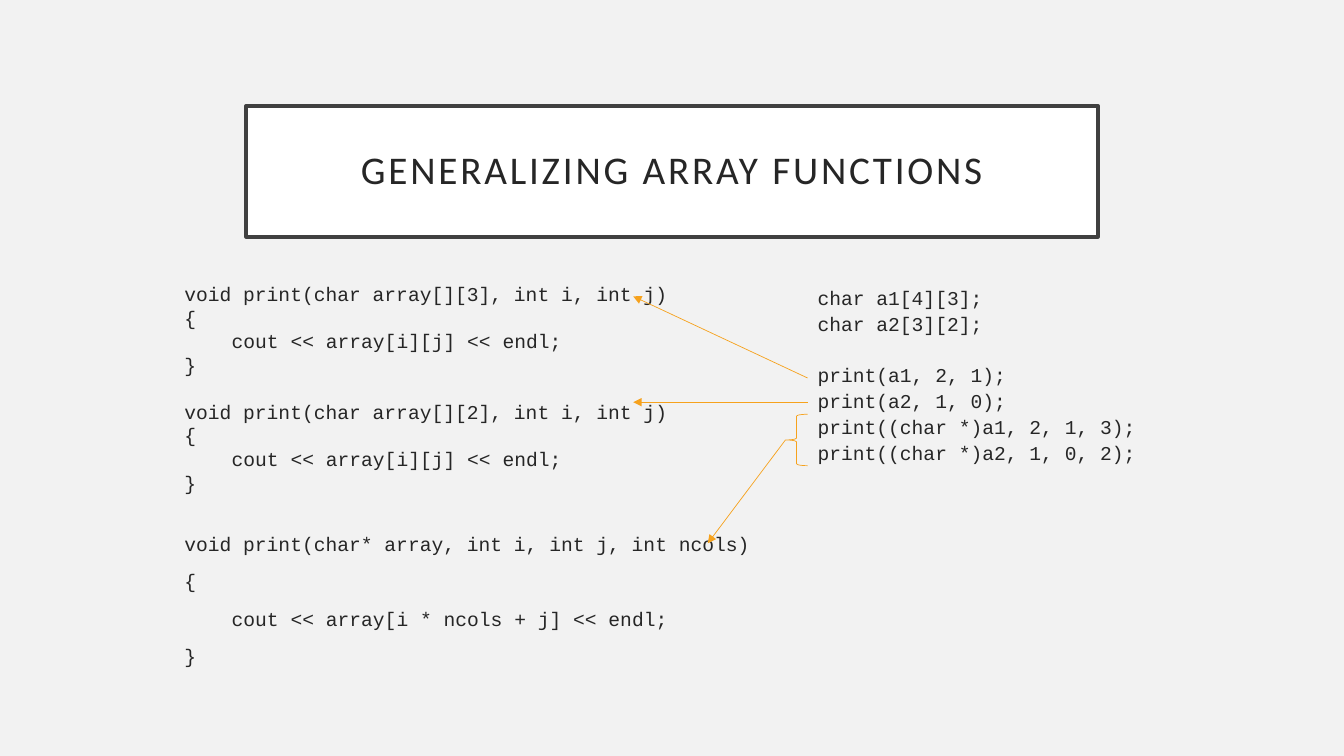
import pptx
import pptx.dml.color
import pptx.enum.shapes
import pptx.enum.text
import pptx.oxml
import pptx.oxml.ns
import pptx.util
from pptx.util import Inches

INK, GOLD = "262626", "F6A21D"
KINDS = pptx.enum.shapes.MSO_SHAPE

# Each block of code lists its lines; a tab marks one indent.
FUNCS = [
    ["void print(char array[][3], int i, int j)", "{",
     "\tcout << array[i][j] << endl;", "}"],
    ["void print(char array[][2], int i, int j)", "{",
     "\tcout << array[i][j] << endl;", "}"],
]
GENERAL = [["void print(char* array, int i, int j, int ncols)", "{",
            "\tcout << array[i * ncols + j] << endl;", "}"]]
CALLS = [
    ["char a1[4][3];", "char a2[3][2];"],
    ["print(a1, 2, 1);", "print(a2, 1, 0);",
     "print((char *)a1, 2, 1, 3);", "print((char *)a2, 1, 0, 2);"],
]


def color(code):
    return pptx.dml.color.RGBColor.from_string(code)


def paint(line, code, width):
    line.color.rgb = color(code)
    line.width = pptx.util.Pt(width)


def write(para, text, font, size):
    run = para.add_run()
    run.text = text
    run.font.name = font
    run.font.size = pptx.util.Pt(size)
    run.font.color.rgb = color(INK)
    return run


def title(slide, box, text):
    shape = slide.shapes.add_shape(KINDS.RECTANGLE, *map(Inches, box))
    shape.shadow.inherit = False
    shape.fill.solid()
    shape.fill.fore_color.rgb = color("FFFFFF")
    paint(shape.line, "404040", 2.5)
    frame = shape.text_frame
    frame.word_wrap = True
    frame.vertical_anchor = pptx.enum.text.MSO_ANCHOR.MIDDLE
    frame.margin_left = frame.margin_right = Inches(0.2)
    frame.margin_top = frame.margin_bottom = Inches(0.2)
    para = frame.paragraphs[0]
    para.alignment = pptx.enum.text.PP_ALIGN.CENTER
    para.line_spacing = 0.9
    run = write(para, text, "Calibri", 28)
    run.font._element.set("spc", "200")


def code(slide, box, parts, pitch):
    """Set blocks of code, one line apart; parts pairs blocks with line gaps."""
    frame = slide.shapes.add_textbox(*map(Inches, box)).text_frame
    frame.word_wrap = True
    first = True
    for blocks, gap in parts:
        for block in blocks:
            for row, text in enumerate(block):
                para = frame.paragraphs[0] if first else frame.add_paragraph()
                space = gap + (pitch if row == 0 and not first else 0)
                para.space_before = pptx.util.Pt(space)
                para.line_spacing = pptx.util.Pt(pitch)
                if text.startswith("\t"):
                    props = para._p.get_or_add_pPr()
                    props.set("marL", str(Inches(0.47)))
                    props.set("indent", "0")
                write(para, text.strip(), "Courier New", 14)
                first = False


def arrow(slide, start, end):
    line = slide.shapes.add_connector(
        pptx.enum.shapes.MSO_CONNECTOR.STRAIGHT, *map(Inches, start + end))
    paint(line.line, GOLD, 0.5)
    tail = pptx.oxml.parse_xml(
        '<a:tailEnd %s type="triangle"/>' % pptx.oxml.ns.nsdecls("a"))
    line.line._get_or_add_ln().append(tail)
    line._element.spPr.append(
        pptx.oxml.parse_xml("<a:effectLst %s/>" % pptx.oxml.ns.nsdecls("a")))
    return line


def brace(slide, box, end):
    """Bracket the cast calls and point from the bracket to end."""
    shape = slide.shapes.add_shape(KINDS.LEFT_BRACE, *map(Inches, box))
    shape.shadow.inherit = False
    shape.fill.background()
    paint(shape.line, GOLD, 0.5)
    left, top, _, height = box
    arrow(slide, (left, top + height / 2), end).begin_connect(shape, 1)


def main():
    deck = pptx.Presentation()
    deck.slide_width, deck.slide_height = Inches(13.33), Inches(7.5)
    slide = deck.slides.add_slide(deck.slide_layouts[6])
    slide.background.fill.solid()
    slide.background.fill.fore_color.rgb = color("F2F2F2")

    title(slide, (2.44, 1.05, 8.45, 1.3), "GENERALIZING ARRAY FUNCTIONS")
    code(slide, (1.73, 2.75, 5.97, 3.99), [(FUNCS, 0), (GENERAL, 10)], 16.8)
    code(slide, (8.01, 2.76, 3.38, 3.39), [(CALLS, 0)], 18.5)
    arrow(slide, (8.01, 3.75), (6.28, 2.94))
    arrow(slide, (8.01, 3.99), (6.28, 3.99))
    brace(slide, (7.79, 4.11, 0.22, 0.51), (7.02, 5.39))
    deck.save("out.pptx")


if __name__ == "__main__":
    main()
